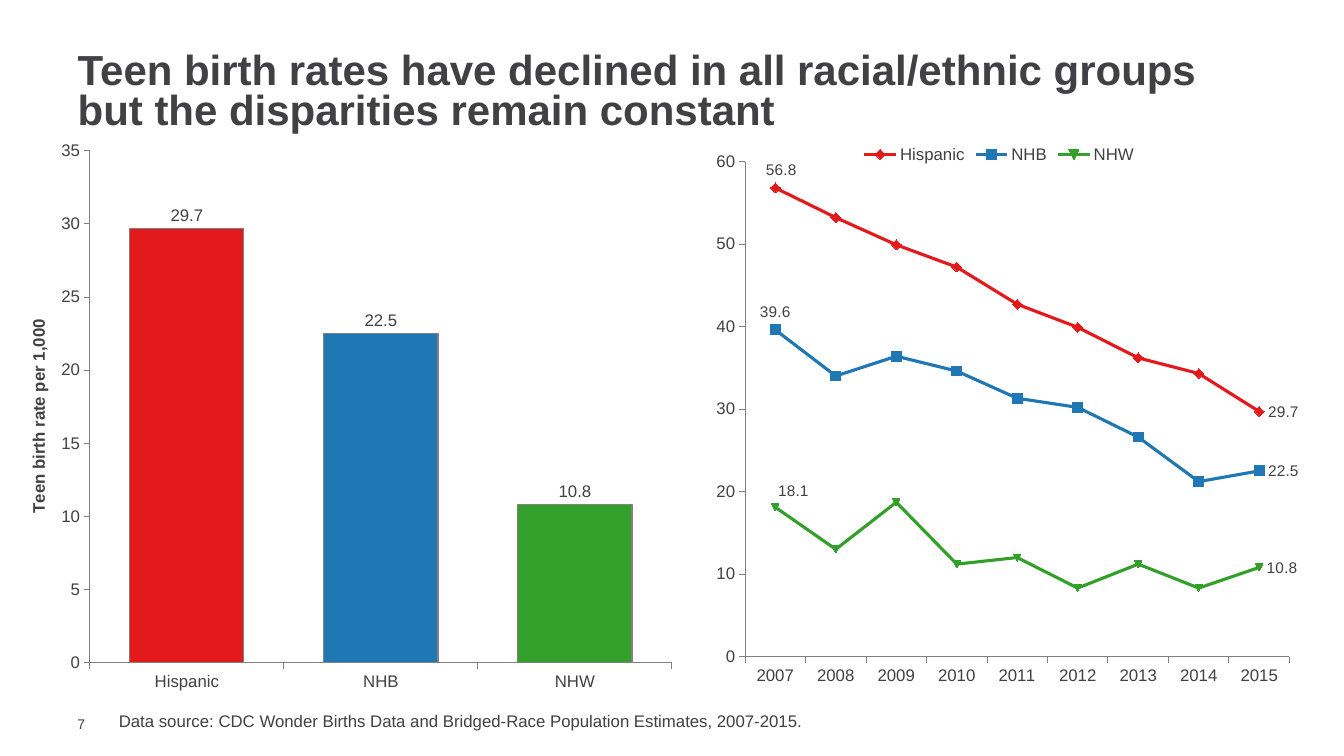
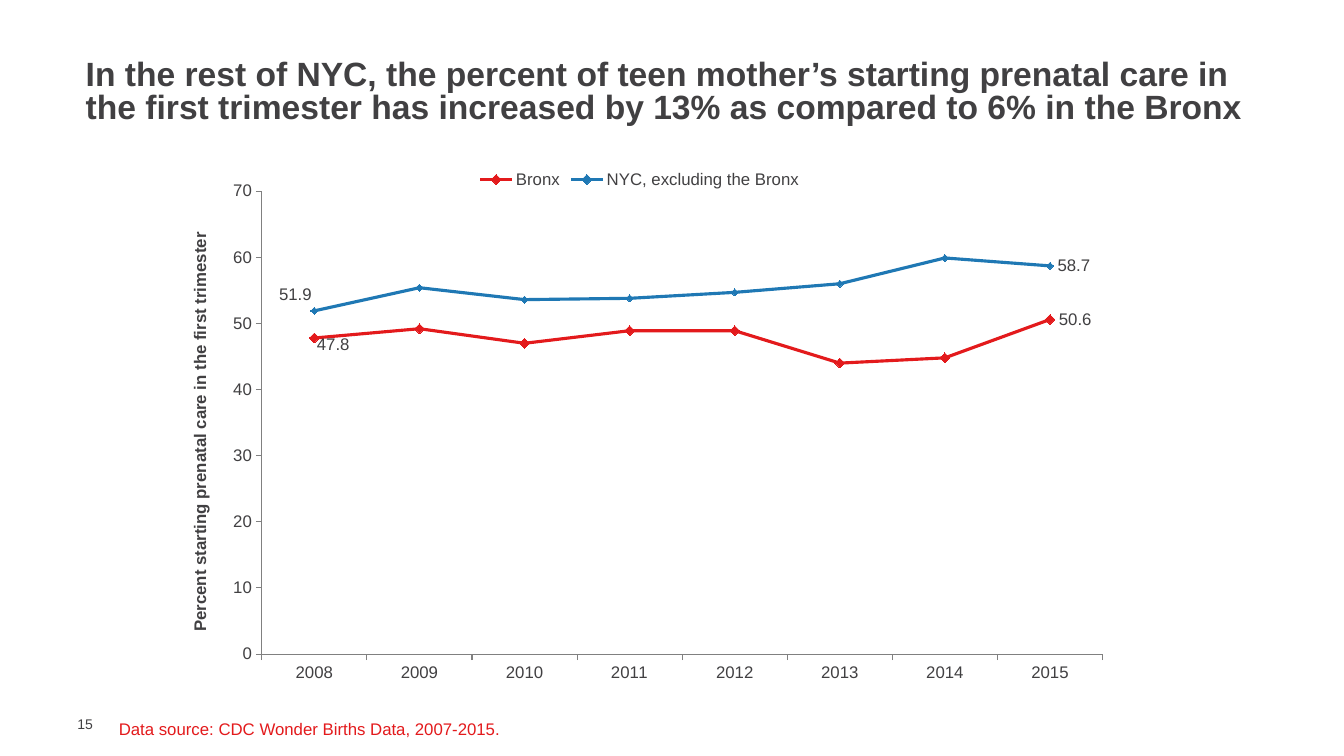
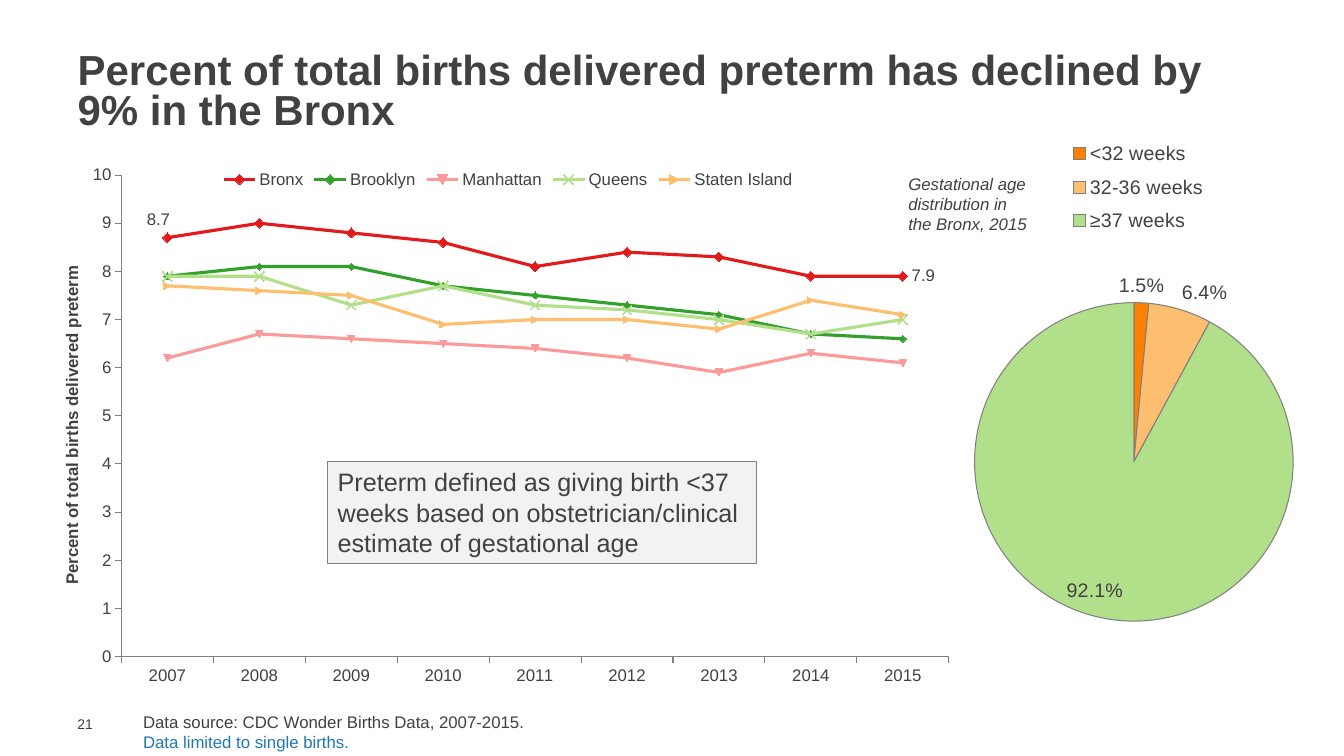
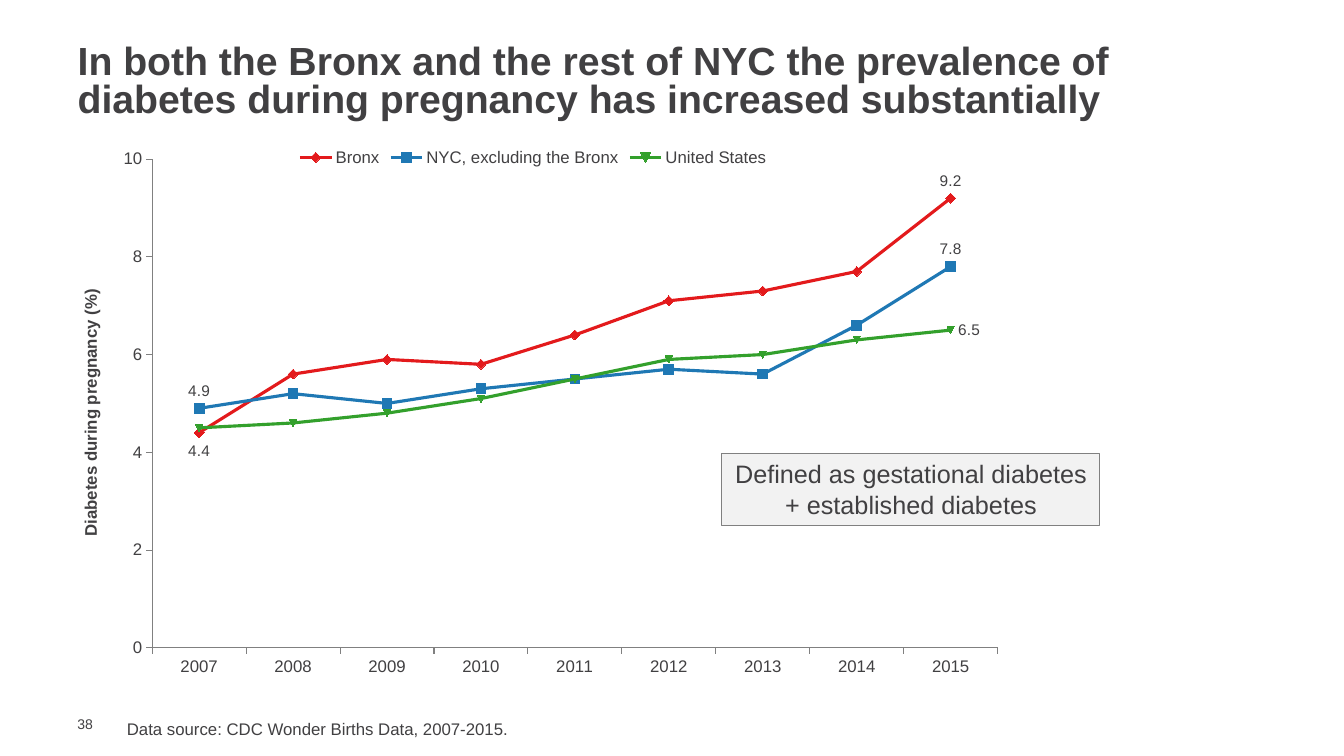
from dataclasses import dataclass

from pptx import Presentation
from pptx.chart.data import CategoryChartData
from pptx.dml.color import RGBColor
from pptx.enum.chart import XL_CHART_TYPE as CT
from pptx.enum.chart import XL_LABEL_POSITION as POS
from pptx.enum.chart import XL_LEGEND_POSITION as LEG
from pptx.enum.chart import XL_MARKER_STYLE as MK
from pptx.enum.chart import XL_TICK_MARK as TICK
from pptx.enum.shapes import MSO_SHAPE
from pptx.enum.text import MSO_ANCHOR, MSO_AUTO_SIZE, PP_ALIGN
from pptx.oxml import parse_xml
from pptx.oxml.ns import nsdecls, qn
from pptx.util import Pt

PX = 9144  # 100 px to the inch


@dataclass(frozen=True)
class Theme:
    font: str = "Arial"
    ink: str = "414042"
    axis: str = "808080"
    panel: str = "F2F2F2"
    red: str = "E31A1C"
    blue: str = "1F78B4"
    green: str = "33A02C"
    pink: str = "FB9A99"
    lime: str = "B2DF8A"
    sand: str = "FDBF6F"
    orange: str = "FF7F00"
    title: int = 30
    note: int = 18
    pie: int = 14
    body: int = 12
    label: int = 11
    number: int = 10
    hairline: float = 0.75
    series_line: float = 2.25


T = Theme()
YEARS = [str(y) for y in range(2007, 2016)]
LAST = len(YEARS) - 1
NYC_REST = "NYC, excluding the Bronx"
SOURCE = "Data source: CDC Wonder Births Data, 2007-2015."


@dataclass(frozen=True)
class Label:
    idx: int
    pos: object = POS.ABOVE
    dx: float = 0
    dy: float = 0


@dataclass(frozen=True)
class Line:
    name: str
    color: str
    values: tuple
    labels: tuple = ()
    marker: object = MK.AUTOMATIC
    marker_size: int = 5


# --- formatting helpers ---

def box(x, y, w, h):
    return [v * PX for v in (x, y, w, h)]


def rgb(color):
    return RGBColor.from_string(color)


def style_font(font, size=T.body, color=T.ink, bold=False, italic=False):
    font.name, font.size = T.font, Pt(size)
    font.bold, font.italic = bold, italic
    font.color.rgb = rgb(color)


def style_line(line, color=T.axis, width=T.hairline):
    line.color.rgb = rgb(color)
    line.width = Pt(width)


def style_fill(fill, color):
    fill.solid()
    fill.fore_color.rgb = rgb(color)


def put_text(sp, text, align=PP_ALIGN.LEFT, anchor=MSO_ANCHOR.TOP,
             spacing=None, margins=(10, 5, 10, 5), **font):
    """Write one paragraph into the first, empty paragraph of a shape."""
    tf = sp.text_frame
    tf.word_wrap, tf.auto_size = True, MSO_AUTO_SIZE.NONE
    tf.vertical_anchor = anchor
    (tf.margin_left, tf.margin_top,
     tf.margin_right, tf.margin_bottom) = box(*margins)
    p = tf.paragraphs[0]
    add_run(p, text, **font)
    p.alignment, p.line_spacing = align, spacing
    return tf


def add_run(p, text, **font):
    r = p.add_run()
    r.text = text
    style_font(r.font, **font)


def manual_layout(x, y, w=None, h=None, inner=False):
    parts = []
    if inner:
        parts.append('<c:layoutTarget val="inner"/>')
    if w:
        parts.append('<c:xMode val="edge"/><c:yMode val="edge"/>')
    for tag, val in zip("xywh", (x, y, w, h)):
        if val is not None:
            parts.append(f'<c:{tag} val="{val}"/>')
    return parse_xml(f'<c:layout {nsdecls("c")}><c:manualLayout>'
                     f'{"".join(parts)}</c:manualLayout></c:layout>')


def drop_layout(el):
    for old in el.findall(qn("c:layout")):
        el.remove(old)


# --- slide parts ---

def add_slide(prs, number, title, at=(67, 47, 1200, 91), size=T.title):
    s = prs.slides.add_slide(prs.slide_layouts[5])
    sp = s.shapes.title
    sp.left, sp.top, sp.width, sp.height = box(*at)
    put_text(sp, title, anchor=MSO_ANCHOR.MIDDLE, spacing=0.8,
             size=size, bold=True)
    add_text(s, (67, 710, 43, 17), str(number), size=T.number,
             anchor=MSO_ANCHOR.MIDDLE, margins=(10, 0, 0, 0))
    return s


def add_text(s, at, text, **fmt):
    return put_text(s.shapes.add_textbox(*box(*at)), text, **fmt)


def add_note(s, at, text, **fmt):
    sp = s.shapes.add_shape(MSO_SHAPE.RECTANGLE, *box(*at))
    sp.shadow.inherit = False
    style_fill(sp.fill, T.panel)
    style_line(sp.line)
    put_text(sp, text, size=T.note, **fmt)


# --- charts ---

def add_chart(s, kind, at, cats, series, plot, size=T.body):
    data = CategoryChartData()
    data.categories = cats
    for name, values in series:
        data.add_series(name, values)
    chart = s.shapes.add_chart(kind, *box(*at), data).chart
    chart.has_title = chart.has_legend = False
    style_font(chart.font, size)
    area = chart._chartSpace.chart.plotArea
    drop_layout(area)
    area.insert(0, manual_layout(*plot, inner=True))
    return chart


def add_legend(chart, pos=LEG.TOP, size=T.body, layout=None):
    chart.has_legend = True
    legend = chart.legend
    legend.position, legend.include_in_layout = pos, False
    style_font(legend.font, size)
    if layout:
        el = legend._element
        drop_layout(el)
        el.find(qn("c:legendPos")).addnext(manual_layout(*layout))


def style_axes(chart, top, step, title=None):
    val = chart.value_axis
    for axis in (chart.category_axis, val):
        axis.has_major_gridlines = False
        axis.major_tick_mark, axis.minor_tick_mark = TICK.OUTSIDE, TICK.NONE
        style_line(axis.format.line)
        style_font(axis.tick_labels.font)
    val.minimum_scale, val.maximum_scale, val.major_unit = 0, top, step
    if title:
        tf = val.axis_title.text_frame
        add_run(tf.paragraphs[0], title, bold=True)
        tf._txBody.bodyPr.set("rot", "-5400000")
        tf._txBody.bodyPr.set("vert", "horz")


def label_points(series, labels, size, leaders):
    series.data_labels.show_value = False
    for el in series._element.xpath("c:dLbls/c:showLeaderLines"):
        el.set("val", str(int(leaders)))
    for label in labels:
        dl = series.points[label.idx].data_label
        style_font(dl.font, size)
        dl.position = label.pos
        if label.dx or label.dy:
            idx = series._element.xpath(
                f'c:dLbls/c:dLbl/c:idx[@val="{label.idx}"]')[0]
            idx.addnext(manual_layout(label.dx, label.dy))


def add_line_chart(s, at, cats, lines, plot, top, step, title=None,
                   label_size=T.body, leaders=False):
    chart = add_chart(s, CT.LINE_MARKERS, at, cats,
                      [(ln.name, ln.values) for ln in lines], plot)
    style_axes(chart, top, step, title)
    add_legend(chart)
    for series, ln in zip(chart.plots[0].series, lines):
        series.smooth = False
        style_line(series.format.line, ln.color, T.series_line)
        marker = series.marker
        marker.style, marker.size = ln.marker, ln.marker_size
        style_fill(marker.format.fill, ln.color)
        style_line(marker.format.line, ln.color)
        if ln.labels:
            label_points(series, ln.labels, label_size, leaders)


def color_points(series, colors):
    for i, color in enumerate(colors):
        fmt = series.points[i].format
        style_fill(fmt.fill, color)
        style_line(fmt.line)


def label_series(series, number_format, pos, size=T.body, percent=False):
    dl = series.data_labels
    dl.show_value, dl.show_percentage = not percent, percent
    dl.number_format, dl.number_format_is_linked = number_format, False
    dl.position = pos
    style_font(dl.font, size)


def add_bar_chart(s, at, cats, values, colors, plot, top, step, title):
    chart = add_chart(s, CT.COLUMN_CLUSTERED, at, cats,
                      [("Series 1", values)], plot)
    style_axes(chart, top, step, title)
    bars = chart.plots[0]
    bars.gap_width, bars.vary_by_categories = 70, False
    color_points(bars.series[0], colors)
    label_series(bars.series[0], "#,##0.0", POS.OUTSIDE_END)


def add_pie_chart(s, at, cats, values, colors, plot, legend):
    chart = add_chart(s, CT.PIE, at, cats, [("Series 1", values)], plot, T.pie)
    add_legend(chart, LEG.RIGHT, T.pie, legend)
    series = chart.plots[0].series[0]
    color_points(series, colors)
    label_series(series, "0.0%", POS.BEST_FIT, T.pie, percent=True)


# --- slides ---

def birth_rates(prs):
    s = add_slide(prs, 7, "Teen birth rates have declined in all racial/ethnic "
                          "groups but the disparities remain constant")
    end = Label(LAST, POS.RIGHT)
    lines = [
        Line("Hispanic", T.red,
             (56.8, 53.2, 49.9, 47.2, 42.7, 39.9, 36.2, 34.3, 29.7),
             (Label(0, dx=0.01), end), MK.DIAMOND, 7),
        Line("NHB", T.blue,
             (39.6, 34.0, 36.4, 34.6, 31.3, 30.2, 26.6, 21.2, 22.5),
             (Label(0), end), MK.SQUARE, 7),
        Line("NHW", T.green,
             (18.1, 13.0, 18.7, 11.2, 12.0, 8.3, 11.2, 8.3, 10.8),
             (Label(0, dx=0.03), end)),
    ]
    add_line_chart(s, (691, 133, 600, 546), YEARS, lines,
                   (0.08, 0.05, 0.9, 0.9), 60, 10,
                   label_size=T.label, leaders=True)
    add_bar_chart(s, (25, 133, 642, 558), [ln.name for ln in lines],
                  [ln.values[-1] for ln in lines],
                  [ln.color for ln in lines],
                  (0.1, 0.03, 0.9, 0.91), 35, 5, "Teen birth rate per 1,000")
    add_text(s, (108, 700, 992, 30), "Data source: CDC Wonder Births Data and "
             "Bridged-Race Population Estimates, 2007-2015.")


def prenatal_care(prs):
    s = add_slide(prs, 15, "In the rest of NYC, the percent of teen mother’s "
                  "starting prenatal care in the first trimester has increased "
                  "by 13% as compared to 6% in the Bronx",
                  (75, 55, 1200, 75), 24)
    years = YEARS[1:]
    end = Label(len(years) - 1, POS.RIGHT)
    lines = [
        Line("Bronx", T.red, (47.8, 49.2, 47.0, 48.9, 48.9, 44.0, 44.8, 50.6),
             (Label(0, POS.BELOW, 0.02, -0.02), end), MK.DIAMOND, 7),
        Line(NYC_REST, T.blue,
             (51.9, 55.4, 53.6, 53.8, 54.7, 56.0, 59.9, 58.7),
             (Label(0, dx=-0.02), end)),
    ]
    add_line_chart(s, (166, 158, 937, 528), years, lines,
                   (0.1, 0.06, 0.89, 0.87), 70, 10,
                   "Percent starting prenatal care in the first trimester")
    add_text(s, (108, 708, 992, 30), SOURCE, color=T.red)


def preterm_births(prs):
    s = add_slide(prs, 21, "Percent of total births delivered preterm has "
                           "declined by 9% in the Bronx")
    lines = [
        Line("Bronx", T.red, (8.7, 9, 8.8, 8.6, 8.1, 8.4, 8.3, 7.9, 7.9),
             (Label(0, dx=-0.01), Label(LAST, POS.RIGHT)), MK.DIAMOND, 7),
        Line("Brooklyn", T.green,
             (7.9, 8.1, 8.1, 7.7, 7.5, 7.3, 7.1, 6.7, 6.6)),
        Line("Manhattan", T.pink,
             (6.2, 6.7, 6.6, 6.5, 6.4, 6.2, 5.9, 6.3, 6.1)),
        Line("Queens", T.lime, (7.9, 7.9, 7.3, 7.7, 7.3, 7.2, 7, 6.7, 7),
             marker=MK.X, marker_size=7),
        Line("Staten Island", T.sand,
             (7.7, 7.6, 7.5, 6.9, 7, 7, 6.8, 7.4, 7.1)),
    ]
    add_line_chart(s, (58, 158, 892, 525), YEARS, lines,
                   (0.07, 0.03, 0.92, 0.91), 10, 1,
                   "Percent of total births delivered preterm")
    tf = add_text(s, (132, 701, 992, 50), SOURCE)
    add_run(tf.add_paragraph(), "Data limited to single births.", color=T.blue)
    add_note(s, (325, 458, 425, 101), "Preterm defined as giving birth <37 "
             "weeks based on obstetrician/clinical estimate of gestational age")
    add_pie_chart(s, (875, 125, 458, 529),
                  ["<32 weeks", "32-36 weeks", "≥37 weeks"], (1.5, 6.4, 92.1),
                  (T.orange, T.sand, T.lime), (0.2, 0.33, 0.69, 0.6),
                  (0.4, 0.01, 0.31, 0.21))
    add_text(s, (891, 167, 142, 71),
             "Gestational age distribution in the Bronx, 2015", italic=True)


def diabetes(prs):
    s = add_slide(prs, 38, "In both the Bronx and the rest of NYC the "
                  "prevalence of diabetes during pregnancy has increased "
                  "substantially", (67, 40, 1200, 85), 28)
    lines = [
        Line("Bronx", T.red, (4.4, 5.6, 5.9, 5.8, 6.4, 7.1, 7.3, 7.7, 9.2),
             (Label(0, POS.BELOW), Label(LAST)), MK.DIAMOND, 7),
        Line(NYC_REST, T.blue,
             (4.9, 5.2, 5.0, 5.3, 5.5, 5.7, 5.6, 6.6, 7.8),
             (Label(0), Label(LAST)), MK.SQUARE, 7),
        Line("United States", T.green,
             (4.5, 4.6, 4.8, 5.1, 5.5, 5.9, 6.0, 6.3, 6.5),
             (Label(LAST, POS.RIGHT),)),
    ]
    add_line_chart(s, (68, 136, 922, 545), YEARS, lines,
                   (0.09, 0.04, 0.91, 0.89), 10, 2,
                   "Diabetes during pregnancy (%)", label_size=T.label)
    add_text(s, (116, 708, 992, 30), SOURCE)
    add_note(s, (716, 450, 375, 71),
             "Defined as gestational diabetes + established diabetes",
             align=PP_ALIGN.CENTER)


def main():
    prs = Presentation()
    prs.slide_width, prs.slide_height = 1333 * PX, 750 * PX
    for build in (birth_rates, prenatal_care, preterm_births, diabetes):
        build(prs)
    prs.save("out.pptx")


if __name__ == "__main__":
    main()
